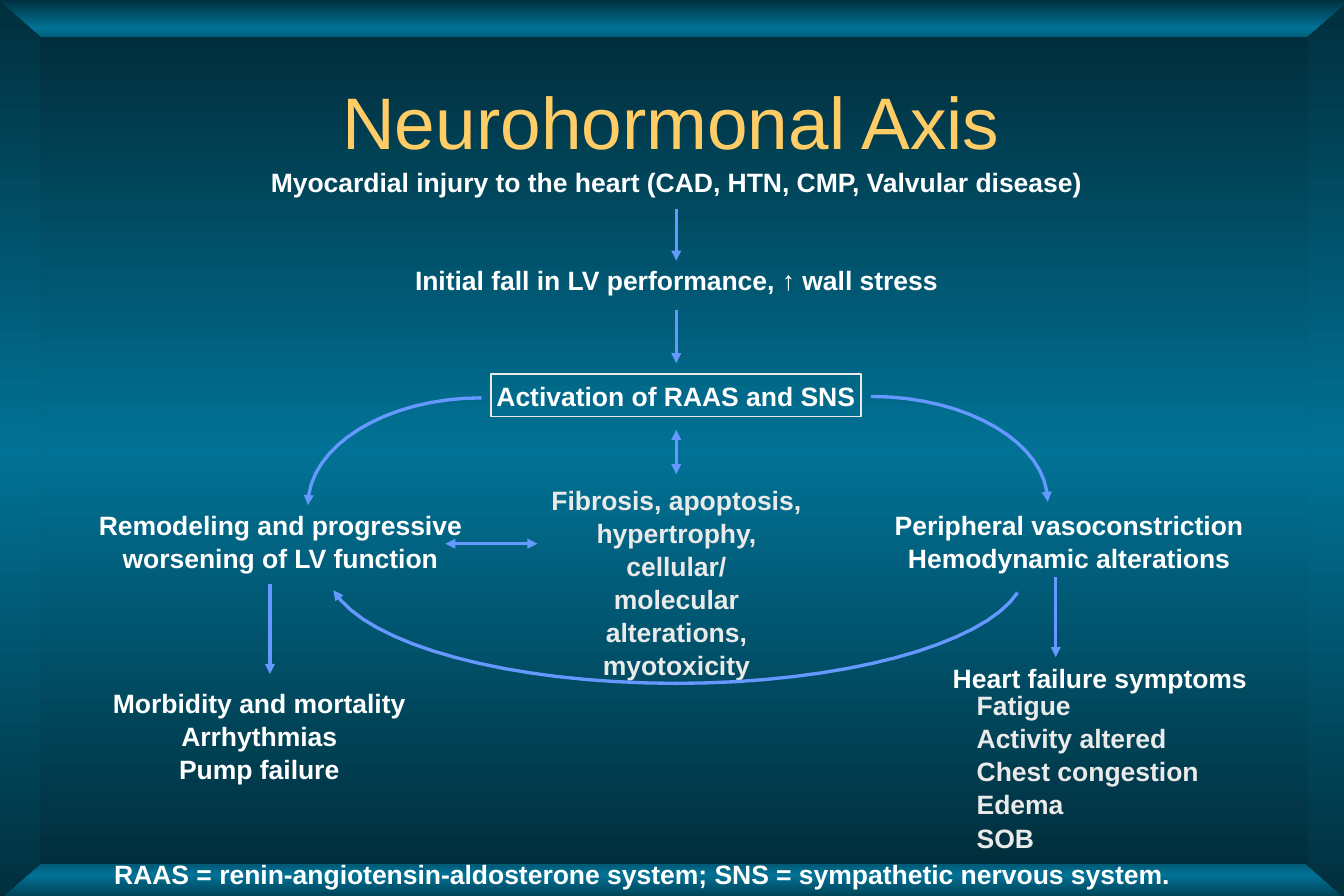
from copy import deepcopy
from dataclasses import dataclass

from lxml import etree
from pptx import Presentation
from pptx.dml.color import RGBColor
from pptx.enum.shapes import MSO_CONNECTOR, MSO_SHAPE
from pptx.enum.text import MSO_ANCHOR, MSO_AUTO_SIZE, PP_ALIGN
from pptx.oxml.ns import qn
from pptx.util import Cm, Pt

BACKGROUND = RGBColor(0x00, 0x66, 0x00)
DEEP_TEAL = RGBColor(0x01, 0x2E, 0x3C)
BRIGHT_TEAL = RGBColor(0x01, 0x72, 0x95)
GOLD = RGBColor(0xFF, 0xCC, 0x66)
WHITE = RGBColor(0xFF, 0xFF, 0xFF)
PALE = RGBColor(0xEA, 0xEA, 0xEA)
ARROW_BLUE = RGBColor(0x66, 0x99, 0xFF)

RECTANGLE = MSO_SHAPE.RECTANGLE
STRAIGHT = MSO_CONNECTOR.STRAIGHT
LEFT, CENTER = PP_ALIGN.LEFT, PP_ALIGN.CENTER
TOP, MIDDLE, BOTTOM = MSO_ANCHOR.TOP, MSO_ANCHOR.MIDDLE, MSO_ANCHOR.BOTTOM
GROW = MSO_AUTO_SIZE.SHAPE_TO_FIT_TEXT

FONT = "Arial"
CURVE_STEPS = 16
AXIS_X = 14.38

Point = tuple[float, float]
Box = tuple[float, float, float, float]


@dataclass(frozen=True)
class Label:
    box: Box
    lines: tuple[str, ...]
    align: PP_ALIGN = CENTER
    anchor: MSO_ANCHOR = TOP
    color: RGBColor = WHITE
    size: int = 16
    bold: bool = True
    wrap: bool = False
    spacing: float = 1.04


@dataclass(frozen=True)
class Arrow:
    start: Point
    end: Point
    double: bool = False


@dataclass(frozen=True)
class Curve:
    start: Point
    segments: tuple[tuple[Point, Point, Point], ...]


SIDE_BARS = ((27.33, -0.03, 1.42, 19.25), (-0.1, -0.03, 1.42, 19.25))
BEVELS = (
    ((-0.05, -0.03), (1.4, 1.24), (27.25, 1.24), (28.73, -0.03)),
    ((-0.13, 19.25), (1.35, 17.96), (27.28, 17.96), (28.75, 19.25)),
)
PANEL = (0.86, 0.79, 26.95, 17.58)

ACTIVATION = Label((10.44, 7.95, 7.87, 0.91), ("Activation of RAAS and SNS",), anchor=MIDDLE)
LABELS = (
    Label((0.84, 0.97, 26.87, 3.18), ("Neurohormonal Axis",), anchor=MIDDLE,
          color=GOLD, size=44, bold=False, wrap=True, spacing=1.0),
    Label((2.18, 18.11, 23.24, 0.94),
          ("RAAS = renin-angiotensin-aldosterone system; SNS = sympathetic nervous system.",),
          align=LEFT, anchor=BOTTOM),
    Label((5.31, 3.38, 18.16, 0.94),
          ("Myocardial injury to the heart (CAD, HTN, CMP, Valvular disease)",)),
    Label((2.11, 14.45, 6.81, 2.31),
          ("Morbidity and mortality", "Arrhythmias", "Pump failure")),
    Label((18.72, 10.67, 8.03, 1.63),
          ("Peripheral vasoconstriction", "Hemodynamic alterations")),
    Label((19.96, 13.92, 6.86, 0.94), ("Heart failure symptoms",)),
    Label((1.75, 10.67, 8.43, 1.63),
          ("Remodeling and progressive", "worsening of LV function"), wrap=True),
    Label((8.46, 5.46, 11.86, 0.94), ("Initial fall in LV performance, ↑ wall stress",)),
    Label((11.35, 10.13, 6.07, 4.37),
          ("Fibrosis, apoptosis,", "hypertrophy, cellular/", "molecular alterations,",
           "myotoxicity"), color=PALE, wrap=True),
    Label((20.52, 14.5, 5.59, 3.68),
          ("Fatigue", "Activity altered", "Chest congestion", "Edema", "SOB"),
          align=LEFT, color=PALE, wrap=True),
)
ARROWS = (
    Arrow((AXIS_X, 4.45), (AXIS_X, 5.54)),
    Arrow((AXIS_X, 6.6), (AXIS_X, 7.72)),
    Arrow((AXIS_X, 9.14), (AXIS_X, 10.08), double=True),
    Arrow((9.47, 11.56), (11.43, 11.56), double=True),
    Arrow((22.45, 12.27), (22.45, 13.97)),
    Arrow((5.74, 12.42), (5.74, 14.33)),
)
CURVES = (
    Curve((10.24, 8.46), (((8.2, 8.46), (6.55, 9.49), (6.55, 10.74)),)),
    Curve((18.52, 8.43), (((20.59, 8.43), (22.28, 9.43), (22.28, 10.67)),)),
    Curve((21.64, 12.6), (
        ((20.9, 13.72), (17.88, 14.53), (AXIS_X, 14.53)),
        ((10.85, 14.53), (7.8, 13.72), (7.09, 12.55)),
    )),
)


def add_outline(slide, points, close: bool):
    scaled = [(Cm(x), Cm(y)) for x, y in points]
    builder = slide.shapes.build_freeform(*scaled[0])
    builder.add_line_segments(scaled[1:], close=close)
    shape = builder.convert_to_shape()
    shape.shadow.inherit = False
    return shape


def add_rectangle(slide, box: Box):
    shape = slide.shapes.add_shape(RECTANGLE, *map(Cm, box))
    shape.shadow.inherit = False
    return shape


def paint_gradient(shape) -> None:
    shape.line.fill.background()
    shape.fill.gradient()
    shape.fill.gradient_angle = 90
    stop_list = shape.element.spPr.find(".//" + qn("a:gsLst"))
    stop_list.append(deepcopy(stop_list[0]))
    colors = (DEEP_TEAL, BRIGHT_TEAL, DEEP_TEAL)
    for index, (stop, color) in enumerate(zip(shape.fill.gradient_stops, colors)):
        stop.color.rgb = color
        stop.position = index / 2


def write_text(shape, label: Label) -> None:
    frame = shape.text_frame
    frame.word_wrap = label.wrap
    frame.vertical_anchor = label.anchor
    for index, line in enumerate(label.lines):
        paragraph = frame.add_paragraph() if index else frame.paragraphs[0]
        paragraph.alignment = label.align
        paragraph.line_spacing = label.spacing
        run = paragraph.add_run()
        run.text = line
        run.font.name = FONT
        run.font.size = Pt(label.size)
        run.font.bold = label.bold
        run.font.color.rgb = label.color


def draw_label(slide, label: Label) -> None:
    shape = slide.shapes.add_textbox(*map(Cm, label.box))
    write_text(shape, label)
    if not label.wrap:
        shape.text_frame.auto_size = GROW


def style_arrow(shape, double: bool) -> None:
    shape.line.color.rgb = ARROW_BLUE
    shape.line.width = Pt(2)
    line = shape.element.spPr.find(qn("a:ln"))
    for end in ("a:headEnd", "a:tailEnd") if double else ("a:tailEnd",):
        etree.SubElement(line, qn(end), type="triangle")


def draw_arrow(slide, arrow: Arrow) -> None:
    connector = slide.shapes.add_connector(STRAIGHT, *map(Cm, arrow.start + arrow.end))
    style_arrow(connector, arrow.double)
    etree.SubElement(connector.element.spPr, qn("a:effectLst"))


def bezier(a: float, b: float, c: float, d: float, t: float) -> float:
    u = 1 - t
    return u**3 * a + 3 * u**2 * t * b + 3 * u * t**2 * c + t**3 * d


def draw_curve(slide, curve: Curve) -> None:
    points = [curve.start]
    for segment in curve.segments:
        xs, ys = zip(points[-1], *segment)
        for step in range(1, CURVE_STEPS + 1):
            t = step / CURVE_STEPS
            points.append((bezier(*xs, t), bezier(*ys, t)))
    shape = add_outline(slide, points, close=False)
    shape.fill.background()
    style_arrow(shape, double=False)


def main() -> None:
    presentation = Presentation()
    presentation.slide_width = Cm(28.58)
    presentation.slide_height = Cm(19.05)
    slide = presentation.slides.add_slide(presentation.slide_layouts[6])
    slide.background.fill.solid()
    slide.background.fill.fore_color.rgb = BACKGROUND

    for bar in SIDE_BARS:
        paint_gradient(add_rectangle(slide, bar))
    for bevel in BEVELS:
        paint_gradient(add_outline(slide, bevel, close=True))
    paint_gradient(add_rectangle(slide, PANEL))

    for label in LABELS:
        draw_label(slide, label)
    activation = add_rectangle(slide, ACTIVATION.box)
    activation.fill.background()
    activation.line.color.rgb = PALE
    activation.line.width = Pt(1)
    write_text(activation, ACTIVATION)

    for arrow in ARROWS:
        draw_arrow(slide, arrow)
    for curve in CURVES:
        draw_curve(slide, curve)
    presentation.save("out.pptx")


if __name__ == "__main__":
    main()
